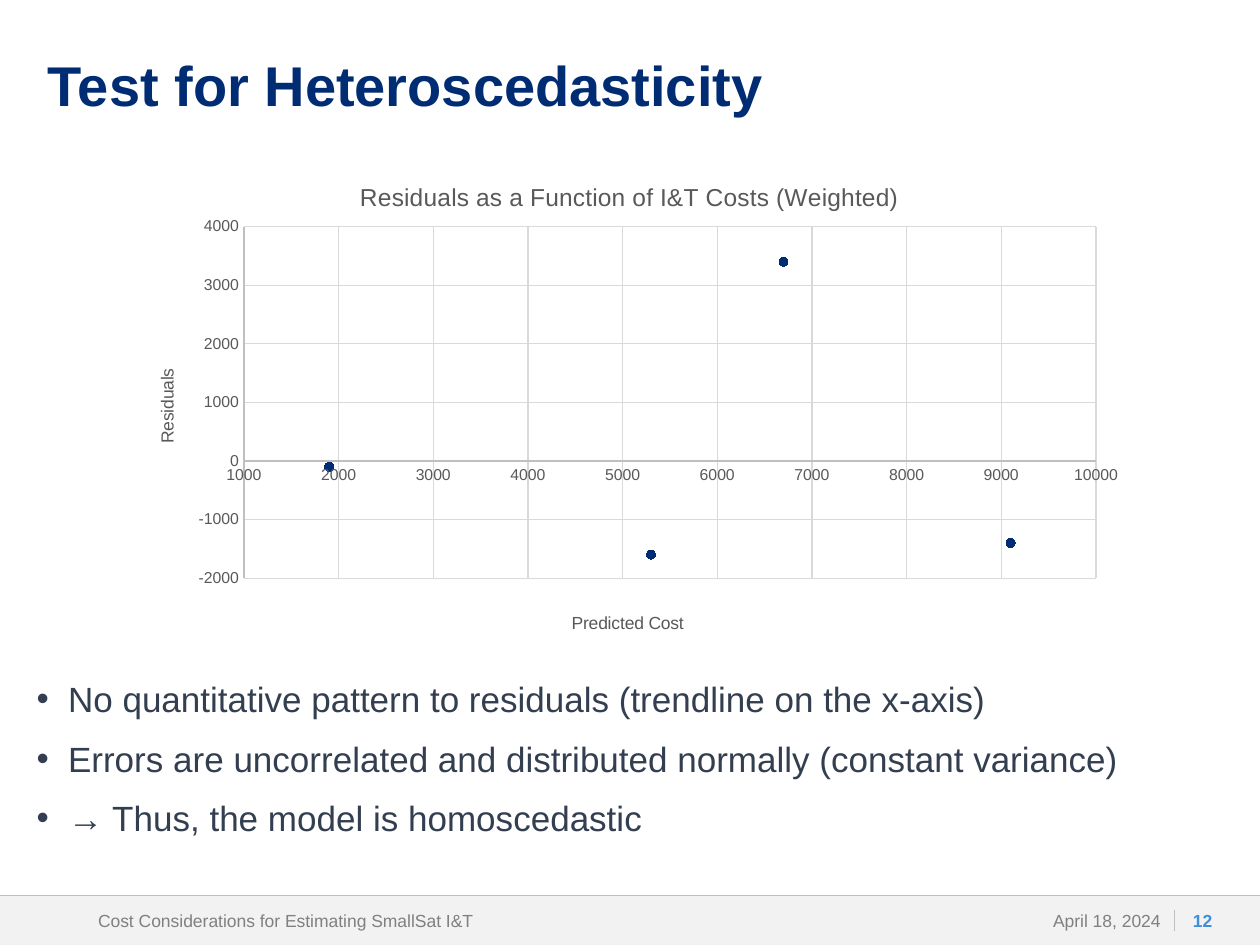
from dataclasses import dataclass

from lxml import etree
from pptx import Presentation
from pptx.chart.data import XyChartData
from pptx.dml.color import RGBColor
from pptx.enum.chart import XL_CHART_TYPE, XL_MARKER_STYLE, XL_TICK_MARK
from pptx.enum.shapes import MSO_CONNECTOR, MSO_SHAPE
from pptx.enum.text import MSO_ANCHOR, MSO_AUTO_SIZE, PP_ALIGN
from pptx.oxml.ns import qn
from pptx.util import Inches, Pt

FONT = "Arial"
NAVY = RGBColor(0x00, 0x2C, 0x73)
SLATE = RGBColor(0x33, 0x3F, 0x50)
BLUE = RGBColor(0x3E, 0x8E, 0xDE)
GRAY = RGBColor(0x80, 0x80, 0x80)
CHART_TEXT = RGBColor(0x59, 0x59, 0x59)
RULE = RGBColor(0xBF, 0xBF, 0xBF)
GRID = RGBColor(0xD9, 0xD9, 0xD9)
FOOTER_FILL = RGBColor(0xF2, 0xF2, 0xF2)
NO_TICKS = XL_TICK_MARK.NONE
MIDDLE = MSO_ANCHOR.MIDDLE
FOOTER_TOP, FOOTER_HEIGHT = 7.11, 0.39


@dataclass
class FooterText:
    text: str
    left: float
    width: float
    margin: float
    alignment: PP_ALIGN
    color: RGBColor = GRAY
    bold: bool = False


@dataclass
class AxisStyle:
    title: str
    title_place: tuple[float, float]
    minimum: int
    maximum: int


FOOTER_TEXTS = [
    FooterText("April 18, 2024", 7.81, 1.5, 0.1, PP_ALIGN.RIGHT),
    FooterText("Cost Considerations for Estimating SmallSat I&T", 0.68, 3.54, 0.1, PP_ALIGN.LEFT),
    FooterText("12", 9.39, 0.31, 0, PP_ALIGN.CENTER, BLUE, True),
]
BULLETS = [
    "No quantitative pattern to residuals (trendline on the x-axis)",
    "Errors are uncorrelated and distributed normally (constant variance)",
    "→ Thus, the model is homoscedastic",
]
RESIDUALS = [(1900, -100), (9100, -1400), (1900, -100), (6700, 3400), (5300, -1600)]
X_AXIS = AxisStyle("Predicted Cost", (0.44, 0.92), 1000, 10000)
Y_AXIS = AxisStyle("Residuals", (0.03, 0.43), -2000, 4000)


def style_font(font, size: float, color: RGBColor, bold: bool = False) -> None:
    font.name = FONT
    font.size = Pt(size)
    font.bold = bold
    font.color.rgb = color


def place(shape, left: float, top: float, width: float, height: float) -> None:
    shape.left, shape.top = Inches(left), Inches(top)
    shape.width, shape.height = Inches(width), Inches(height)


def set_frame(frame, side_margin: float, anchor: MSO_ANCHOR) -> None:
    frame.word_wrap = True
    frame.auto_size = MSO_AUTO_SIZE.NONE
    frame.vertical_anchor = anchor
    frame.margin_left = frame.margin_right = Inches(side_margin)
    frame.margin_top = frame.margin_bottom = 0


def add_rule(slide, x1: float, y1: float, x2: float, y2: float) -> None:
    rule = slide.shapes.add_connector(
        MSO_CONNECTOR.STRAIGHT, Inches(x1), Inches(y1), Inches(x2), Inches(y2))
    rule.line.color.rgb = RULE
    rule.line.width = Pt(0.5)
    etree.SubElement(rule._element.spPr, qn("a:effectLst"))


def add_footer(slide) -> None:
    band = slide.shapes.add_shape(
        MSO_SHAPE.RECTANGLE, 0, Inches(FOOTER_TOP), Inches(10), Inches(FOOTER_HEIGHT))
    band.shadow.inherit = False
    band.fill.solid()
    band.fill.fore_color.rgb = FOOTER_FILL
    band.line.fill.background()
    add_rule(slide, 0, FOOTER_TOP, 10, FOOTER_TOP)
    add_rule(slide, 9.32, 7.22, 9.32, 7.39)
    for item in FOOTER_TEXTS:
        box = slide.shapes.add_textbox(
            Inches(item.left), Inches(FOOTER_TOP), Inches(item.width), Inches(FOOTER_HEIGHT))
        set_frame(box.text_frame, item.margin, MIDDLE)
        paragraph = box.text_frame.paragraphs[0]
        paragraph.text = item.text
        paragraph.alignment = item.alignment
        style_font(paragraph.font, 10, item.color, item.bold)


def fill_title(title) -> None:
    place(title, 0.38, 0.46, 9.25, 0.83)
    set_frame(title.text_frame, 0, MSO_ANCHOR.TOP)
    paragraph = title.text_frame.paragraphs[0]
    paragraph.text = "Test for Heteroscedasticity"
    paragraph.alignment = PP_ALIGN.LEFT
    paragraph.line_spacing = 0.9
    style_font(paragraph.font, 32, NAVY, True)


def fill_bullets(body) -> None:
    place(body, 0.29, 5.38, 9.25, 1.62)
    frame = body.text_frame
    set_frame(frame, 0, MSO_ANCHOR.TOP)
    for index, text in enumerate(BULLETS):
        paragraph = frame.add_paragraph() if index else frame.paragraphs[0]
        paragraph.text = text
        paragraph.space_before = Pt(10 if index else 0)
        properties = paragraph._p.get_or_add_pPr()
        properties.set("marL", str(Inches(0.25)))
        properties.set("indent", str(Inches(-0.25)))
        etree.SubElement(properties, qn("a:buChar"), char="•")
        style_font(paragraph.font, 20, SLATE)


def set_layout(element, index: int, values: dict[str, float | str]) -> None:
    """Position a chart part by fractions of the chart area."""
    for old in element.findall(qn("c:layout")):
        element.remove(old)
    layout = etree.Element(qn("c:layout"))
    manual = etree.SubElement(layout, qn("c:manualLayout"))
    for name, value in values.items():
        etree.SubElement(manual, qn(f"c:{name}"), val=str(value))
    element.insert(index, layout)


def set_chart_title(title, text: str, size: float, position: tuple[float, float]) -> None:
    paragraph = title.text_frame.paragraphs[0]
    paragraph.text = text
    style_font(paragraph.font, size, CHART_TEXT)
    x, y = position
    set_layout(title._element, 1, {"xMode": "edge", "yMode": "edge", "x": x, "y": y})


def style_axis(axis, style: AxisStyle) -> None:
    axis.minimum_scale, axis.maximum_scale = style.minimum, style.maximum
    axis.major_unit = 1000
    axis.major_tick_mark = axis.minor_tick_mark = NO_TICKS
    axis.has_major_gridlines = True
    for line, color in ((axis.format.line, RULE), (axis.major_gridlines.format.line, GRID)):
        line.color.rgb = color
        line.width = Pt(0.75)
    style_font(axis.tick_labels.font, 9, CHART_TEXT)
    axis.tick_labels.number_format = "General"
    axis.tick_labels.number_format_is_linked = False
    set_chart_title(axis.axis_title, style.title, 10, style.title_place)


def add_residual_chart(slide) -> None:
    data = XyChartData()
    points = data.add_series("Series 1")
    for cost, residual in RESIDUALS:
        points.add_data_point(cost, residual)
    chart = slide.shapes.add_chart(
        XL_CHART_TYPE.XY_SCATTER, Inches(0.97), Inches(1.21), Inches(8.05), Inches(3.93), data).chart
    chart.has_legend = False
    chart.font.name = FONT
    chart.font.size = Pt(10)
    chart.has_title = True
    set_chart_title(chart.chart_title, "Residuals as a Function of I&T Costs (Weighted)", 14, (0.23, 0.05))
    style_axis(chart.category_axis, X_AXIS)
    style_axis(chart.value_axis, Y_AXIS)
    set_layout(chart._chartSpace.chart.plotArea, 0, {
        "layoutTarget": "inner", "xMode": "edge", "yMode": "edge",
        "x": 0.12, "y": 0.15, "w": 0.84, "h": 0.71})
    plot = chart.plots[0]
    plot.vary_by_categories = False
    series = plot.series[0]
    series.format.line.fill.background()
    series.marker.style = XL_MARKER_STYLE.CIRCLE
    series.marker.size = 5
    series.marker.format.fill.solid()
    series.marker.format.fill.fore_color.rgb = NAVY
    series.marker.format.line.color.rgb = NAVY


def main() -> None:
    presentation = Presentation()
    presentation.slide_width, presentation.slide_height = Inches(10), Inches(7.5)
    slide = presentation.slides.add_slide(presentation.slide_layouts[1])
    add_footer(slide)
    fill_title(slide.shapes.title)
    fill_bullets(slide.placeholders[1])
    add_residual_chart(slide)
    presentation.save("out.pptx")


if __name__ == "__main__":
    main()
